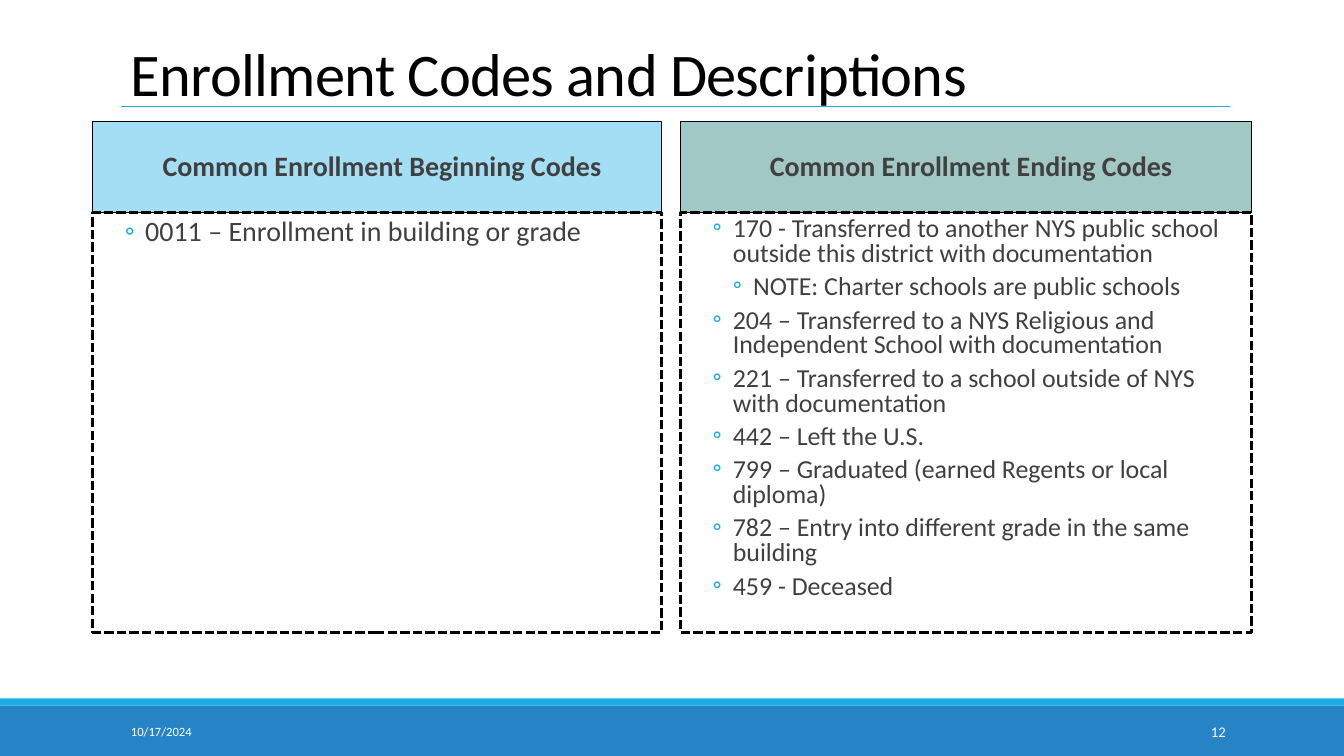
from lxml.etree import SubElement
from pptx import Presentation
from pptx.dml.color import RGBColor
from pptx.enum.dml import MSO_LINE as Dash
from pptx.enum.shapes import MSO_CONNECTOR as Link, MSO_SHAPE as Form
from pptx.enum.text import MSO_ANCHOR as Anchor, PP_ALIGN as Align
from pptx.oxml.ns import qn
from pptx.util import Cm, Pt

FONT = "Calibri"
BLACK, WHITE, GREY = "000000", "FFFFFF", "404040"
CYAN, BLUE = "1CADE4", "2683C6"
STEP = 0.51  # hanging indent of a bullet, in cm
TOP, HEAD, BODY = 3.07, 2.29, 10.57  # panel heights, in cm

BEGIN = [(1, "0011 – Enrollment in building or grade")]
END = [
    (1, "170 - Transferred to another NYS public school outside this district with documentation"),
    (2, "NOTE: Charter schools are public schools"),
    (1, "204 – Transferred to a NYS Religious and Independent School with documentation"),
    (1, "221 – Transferred to a school outside of NYS with documentation"),
    (1, "442 – Left the U.S."),
    (1, "799 – Graduated (earned Regents or local diploma)"),
    (1, "782 – Entry into different grade in the same building"),
    (1, "459 - Deceased"),
]


def color(code):
    return RGBColor.from_string(code)


def write(para, text, size=20, ink=GREY, bold=False, align=Align.LEFT,
          lead=1.0, before=0, after=0, track=None):
    """Fill a paragraph; track is letter spacing in hundredths of a point."""
    para.alignment, para.line_spacing = align, lead
    para.space_before, para.space_after = Pt(before), Pt(after)
    run = para.add_run()
    run.text = text
    font = run.font
    font.name, font.size, font.bold = FONT, Pt(size), bold
    font.color.rgb = color(ink)
    if track is not None:
        font._element.set("spc", str(track))


def indent(para, left, first=0):
    props = para._p.get_or_add_pPr()
    props.set("marL", str(Cm(left)))
    props.set("indent", str(Cm(first)))
    return props


def bullet(para, level):
    para.level = level
    props = indent(para, 0.05 + STEP * (level + 1), -STEP)
    tint = SubElement(props, qn("a:buClr"))
    SubElement(tint, qn("a:srgbClr"), val=CYAN)
    SubElement(props, qn("a:buFont"), typeface=FONT)
    SubElement(props, qn("a:buChar"), char="◦")


def box(slide, x, y, w, h, fill=None, line=None, width=0.75, dash=None):
    shape = slide.shapes.add_shape(Form.RECTANGLE, Cm(x), Cm(y), Cm(w), Cm(h))
    shape.shadow.inherit = False
    if fill:
        shape.fill.solid()
        shape.fill.fore_color.rgb = color(fill)
    else:
        shape.fill.background()
    if line:
        shape.line.color.rgb = color(line)
        shape.line.width = Pt(width)
        shape.line.dash_style = dash
    else:
        shape.line.fill.background()
    return shape


def label(slide, x, y, w, h, text, anchor=Anchor.MIDDLE, **style):
    frame = slide.shapes.add_textbox(Cm(x), Cm(y), Cm(w), Cm(h)).text_frame
    frame.word_wrap = True
    frame.vertical_anchor = anchor
    write(frame.paragraphs[0], text, **style)


def rule(slide, x, y, end):
    line = slide.shapes.add_connector(Link.STRAIGHT, Cm(x), Cm(y), Cm(end), Cm(y))
    line.line.color.rgb = color(CYAN)
    line.line.width = Pt(1)
    SubElement(line._element.spPr, qn("a:effectLst"))


def panel(slide, x, w, fill, title, items, size, lead):
    """Draw a filled heading above a dashed box of bulleted codes."""
    frame = box(slide, x, TOP, w, HEAD, fill, BLACK).text_frame
    frame.vertical_anchor = Anchor.MIDDLE
    para = frame.paragraphs[0]
    write(para, title, bold=True, align=Align.CENTER, lead=0.9, before=12, after=2)
    indent(para, 0.25)

    frame = box(slide, x, TOP + HEAD, w, BODY, line=BLACK, width=2.25,
                dash=Dash.SQUARE_DOT).text_frame
    frame.vertical_anchor = Anchor.TOP
    for i, (level, text) in enumerate(items):
        para = frame.add_paragraph() if i else frame.paragraphs[0]
        write(para, text, size=size, lead=lead, before=2, after=4)
        bullet(para, level)


def main():
    deck = Presentation()
    deck.slide_width, deck.slide_height = Cm(33.87), Cm(19.05)
    slide = deck.slides.add_slide(deck.slide_layouts[6])

    box(slide, 0, 17.78, 33.87, 1.27, BLUE)
    box(slide, 0, 17.6, 33.87, 0.18, CYAN)
    rule(slide, 3.05, 2.69, 30.99)
    label(slide, 3.05, 0.97, 27.94, 1.9, "Enrollment Codes and Descriptions",
          Anchor.BOTTOM, size=43.2, ink=BLACK, lead=0.85, track=-50)
    label(slide, 3.05, 17.93, 6.86, 1.02, "10/17/2024", size=9, ink=WHITE)
    label(slide, 27.51, 17.93, 3.63, 1.02, "12", size=10.5, ink=WHITE,
          align=Align.RIGHT)

    panel(slide, 2.34, 14.33, "A4DEF4", "Common Enrollment Beginning Codes",
          BEGIN, 20, 0.9)
    panel(slide, 17.15, 14.4, "A1C8C5", "Common Enrollment Ending Codes",
          END, 18.5, 0.8)
    deck.save("out.pptx")


if __name__ == "__main__":
    main()
